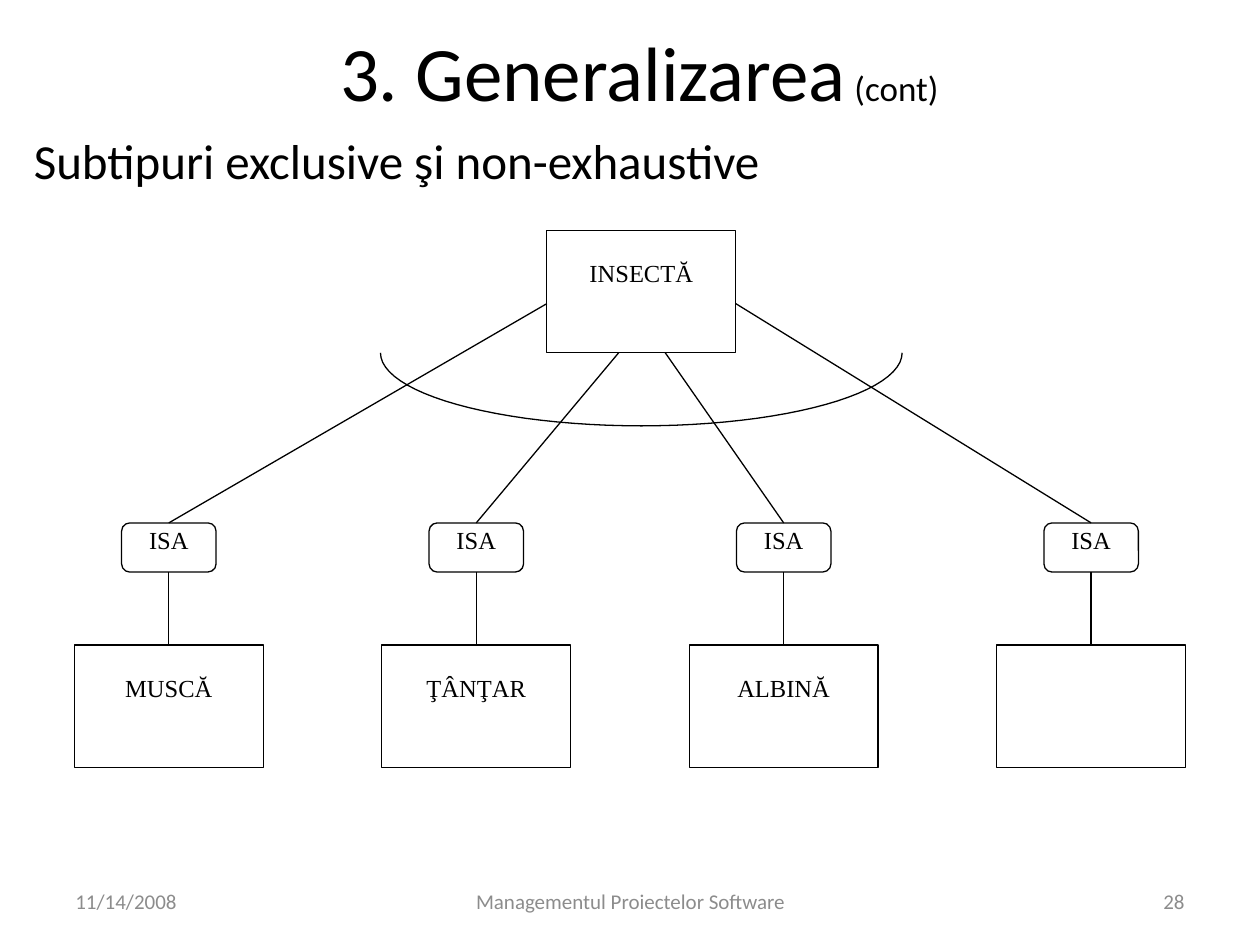
from math import cos, pi, sin

from lxml import etree
from pptx import Presentation
from pptx.dml.color import RGBColor
from pptx.enum.shapes import MSO_CONNECTOR, MSO_SHAPE
from pptx.enum.text import MSO_ANCHOR, PP_ALIGN
from pptx.oxml.ns import qn
from pptx.util import Inches, Pt

# Content
TITLE = [(" 3. Generalizarea", 44), (" (cont)", 20)]
SUBTITLE = "Subtipuri exclusive şi non-exhaustive"
SUPERTYPE = "INSECTĂ"
RELATION = "ISA"
SUBTYPES = ["MUSCĂ", "ŢÂNŢAR", "ALBINĂ", ""]
FOOTERS = [  # text, left, width, alignment
    ("11/14/2008", 0.5, 2.33, PP_ALIGN.LEFT),
    ("Managementul Proiectelor Software", 3.42, 3.17, PP_ALIGN.CENTER),
    ("28", 7.17, 2.33, PP_ALIGN.RIGHT),
]

COLORS = {"ink": "000000", "paper": "FFFFFF", "footer": "8C8C8C"}

# Diagram geometry in inches
ENTITY_W, ENTITY_H = 1.5, 0.97
ISA_W, ISA_H = 0.75, 0.39
ROOT_X, ROOT_Y = 5.09, 1.83
ISA_Y, SUBTYPE_Y = 4.15, 5.12
FIRST_X, STEP_X = 1.34, 2.44
ROOT_BOTTOM = ROOT_Y + ENTITY_H
BRANCH_STARTS = [
    (ROOT_X - ENTITY_W / 2, 2.41),
    (4.91, ROOT_BOTTOM),
    (5.28, ROOT_BOTTOM),
    (ROOT_X + ENTITY_W / 2, 2.41),
]
ARC_RX, ARC_RY, ARC_STEPS = 2.07, 0.58, 48


def color(name):
    return RGBColor.from_string(COLORS[name])


def write(frame, runs, font="Calibri", ink="ink", align=PP_ALIGN.LEFT,
          anchor=MSO_ANCHOR.TOP, spacing=None, before=None, insets=None):
    """Write (text, size) runs as one paragraph."""
    frame.word_wrap = True
    frame.vertical_anchor = anchor
    if insets:
        (frame.margin_left, frame.margin_top,
         frame.margin_right, frame.margin_bottom) = map(Inches, insets)
    paragraph = frame.paragraphs[0]
    paragraph.alignment = align
    if spacing:
        paragraph.line_spacing = spacing
    if before:
        paragraph.space_before = Pt(before)
    for text, size in runs:
        run = paragraph.add_run()
        run.text = text
        run.font.name, run.font.size = font, Pt(size)
        run.font.color.rgb = color(ink)


def outline(item):
    item.line.color.rgb = color("ink")
    item.line.width = Pt(0.75)


def add_node(slide, kind, center_x, top, width, height, label, text_top=0):
    node = slide.shapes.add_shape(kind, Inches(center_x - width / 2), Inches(top),
                                  Inches(width), Inches(height))
    node.shadow.inherit = False
    node.fill.solid()
    node.fill.fore_color.rgb = color("paper")
    outline(node)
    if label:
        write(node.text_frame, [(label, 14)], font="Times New Roman",
              align=PP_ALIGN.CENTER, insets=(0, text_top, 0, 0))


def add_entity(slide, center_x, top, label):
    add_node(slide, MSO_SHAPE.RECTANGLE, center_x, top, ENTITY_W, ENTITY_H,
             label, text_top=0.22)


def add_line(slide, start, end):
    line = slide.shapes.add_connector(MSO_CONNECTOR.STRAIGHT,
                                      *map(Inches, (*start, *end)))
    outline(line)
    etree.SubElement(line._element.spPr, qn("a:effectLst"))


def add_exclusive_arc(slide):
    """Lower half of an ellipse that crosses all branches."""
    angles = [pi * (1 - step / ARC_STEPS) for step in range(ARC_STEPS + 1)]
    points = [(Inches(ROOT_X + ARC_RX * cos(a)), Inches(ROOT_BOTTOM + ARC_RY * sin(a)))
              for a in angles]
    builder = slide.shapes.build_freeform(*points[0])
    builder.add_line_segments(points[1:], close=False)
    arc = builder.convert_to_shape()
    arc.shadow.inherit = False
    arc.fill.background()
    outline(arc)


def main():
    prs = Presentation()
    prs.slide_width, prs.slide_height = Inches(10), Inches(7.5)
    slide = prs.slides.add_slide(prs.slide_layouts[5])

    # Title and subtitle
    title = slide.shapes.title
    title.left, title.top, title.width, title.height = map(Inches, (0.17, 0.17, 9.67, 1))
    write(title.text_frame, TITLE, align=PP_ALIGN.CENTER,
          anchor=MSO_ANCHOR.MIDDLE, spacing=0.6)
    subtitle = slide.shapes.add_textbox(*map(Inches, (0.17, 1.08, 9.67, 5.58)))
    write(subtitle.text_frame, [(SUBTITLE, 28)], spacing=0.8, before=5.6)

    # Footer
    for text, left, width, align in FOOTERS:
        footer = slide.shapes.add_textbox(*map(Inches, (left, 6.95, width, 0.4)))
        write(footer.text_frame, [(text, 12)], ink="footer", align=align,
              anchor=MSO_ANCHOR.MIDDLE)

    # Supertype with one branch per subtype
    add_entity(slide, ROOT_X, ROOT_Y, SUPERTYPE)
    for index, (subtype, start) in enumerate(zip(SUBTYPES, BRANCH_STARTS)):
        x = FIRST_X + index * STEP_X
        add_node(slide, MSO_SHAPE.ROUNDED_RECTANGLE, x, ISA_Y, ISA_W, ISA_H, RELATION)
        add_entity(slide, x, SUBTYPE_Y, subtype)
        add_line(slide, start, (x, ISA_Y))
        add_line(slide, (x, ISA_Y + ISA_H), (x, SUBTYPE_Y))
    add_exclusive_arc(slide)

    prs.save("out.pptx")


if __name__ == "__main__":
    main()
